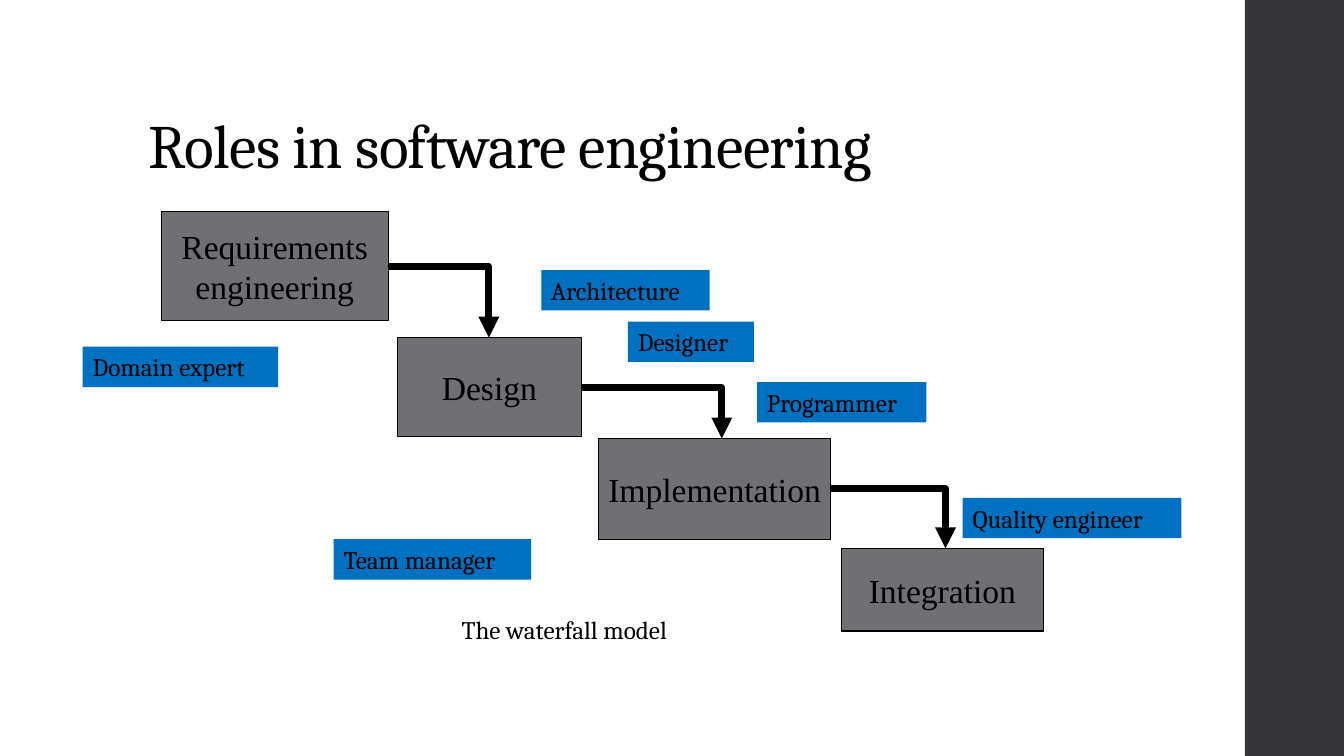
from dataclasses import dataclass

from lxml.etree import SubElement
from pptx import Presentation
from pptx.dml.color import RGBColor
from pptx.enum.shapes import MSO_CONNECTOR as Link, MSO_SHAPE as Preset
from pptx.enum.text import MSO_ANCHOR as Anchor, PP_ALIGN as Align
from pptx.oxml.ns import qn
from pptx.util import Inches, Pt

CELL = Inches(0.1)
COLUMNS, ROWS = 133.33, 75


@dataclass(frozen=True)
class Theme:
    """Colours, fonts and sizes of the slide."""
    ink: RGBColor = RGBColor(0x00, 0x00, 0x00)
    sidebar: RGBColor = RGBColor(0x35, 0x35, 0x37)
    phase: RGBColor = RGBColor(0x6F, 0x6F, 0x74)
    role: RGBColor = RGBColor(0x00, 0x70, 0xC0)
    body_font: str = "Cambria"
    phase_font: str = "Times New Roman"
    title_size: int = 44
    phase_size: int = 24
    role_size: int = 18
    outline: float = 0.75
    arrow: float = 5


THEME = Theme()

PHASES = [
    ("Requirements\nengineering", (16, 21, 22.5, 10.8)),
    ("Design", (39.4, 33.5, 18.3, 9.8)),
    ("Implementation", (59.4, 43.5, 23, 10)),
    ("Integration", (83.5, 54.4, 20, 8.2)),
]
ARROW_COLUMNS = [48.5, 71.6, 93.8]

ROLE_HEIGHT = 4
ROLES = [
    ("Domain expert", 8.2, 34.4, 19.4),
    ("Architecture", 53.7, 26.8, 16.7),
    ("Designer", 62.3, 31.9, 12.5),
    ("Programmer", 75.1, 37.9, 16.8),
    ("Quality engineer", 95.5, 49.4, 21.7),
    ("Team manager", 33.1, 53.5, 19.6),
]


def cells(*counts):
    """Turn grid counts into slide lengths."""
    return [round(count * CELL) for count in counts]


def add_panel(slide, box, fill, outline=None):
    """Draw a flat rectangle, outlined when a line width is given."""
    panel = slide.shapes.add_shape(Preset.RECTANGLE, *cells(*box))
    panel.shadow.inherit = False
    panel.fill.solid()
    panel.fill.fore_color.rgb = fill
    if outline:
        panel.line.color.rgb = THEME.ink
        panel.line.width = Pt(outline)
    else:
        panel.line.fill.background()
    return panel


def write(frame, wording, font, size, align=Align.LEFT, anchor=Anchor.TOP):
    """Fill a text frame and format all its runs."""
    frame.text = wording
    frame.vertical_anchor = anchor
    for paragraph in frame.paragraphs:
        paragraph.alignment = align
        for run in paragraph.runs:
            run.font.name = font
            run.font.size = Pt(size)
            run.font.color.rgb = THEME.ink


def add_title(slide, box):
    """Place the heading at the bottom of its box."""
    frame = slide.shapes.add_textbox(*cells(*box)).text_frame
    frame.word_wrap = True
    write(frame, "Roles in software engineering", THEME.body_font,
          THEME.title_size, anchor=Anchor.BOTTOM)
    heading = frame.paragraphs[0]
    heading.line_spacing = 0.9
    heading.runs[0].font._element.set("spc", "-50")


def add_phase(slide, wording, box):
    """Draw one phase of the waterfall."""
    frame = add_panel(slide, box, THEME.phase, THEME.outline).text_frame
    frame.word_wrap = False
    write(frame, wording, THEME.phase_font, THEME.phase_size,
          Align.CENTER, Anchor.MIDDLE)


def add_flow(slide, source, target, column):
    """Run an elbow arrow from a phase's right side to the next one's top."""
    left, top, width, height = source
    ends = cells(left + width, top + height / 2, column, target[1])
    arrow = slide.shapes.add_connector(Link.ELBOW, *ends)
    arrow.line.color.rgb = THEME.ink
    arrow.line.width = Pt(THEME.arrow)
    properties = arrow._element.spPr
    properties.find(qn("a:prstGeom")).set("prst", "bentConnector2")
    SubElement(arrow.line._get_or_add_ln(), qn("a:tailEnd"), type="triangle")
    SubElement(properties, qn("a:effectLst"))


def add_waterfall(slide):
    """Draw the phases and the arrows that join them."""
    for wording, box in PHASES:
        add_phase(slide, wording, box)
    boxes = [box for _, box in PHASES]
    for source, target, column in zip(boxes, boxes[1:], ARROW_COLUMNS):
        add_flow(slide, source, target, column)


def add_caption(slide, box):
    """Name the model below the diagram."""
    frame = slide.shapes.add_textbox(*cells(*box)).text_frame
    frame.word_wrap = True
    write(frame, "The waterfall model", THEME.body_font, THEME.role_size)


def add_roles(slide):
    """Place a tag for each role beside its phase."""
    for role, left, top, width in ROLES:
        tag = add_panel(slide, (left, top, width, ROLE_HEIGHT), THEME.role)
        tag.text_frame.word_wrap = True
        write(tag.text_frame, role, THEME.body_font, THEME.role_size)


def main():
    """Build and save the slide."""
    deck = Presentation()
    deck.slide_width, deck.slide_height = cells(COLUMNS, ROWS)
    slide = deck.slides.add_slide(deck.slide_layouts[6])
    add_panel(slide, (123.5, 0, COLUMNS - 123.5, ROWS), THEME.sidebar)
    add_title(slide, (13.8, 4, 106, 14.5))
    add_waterfall(slide)
    add_caption(slide, (44.8, 60.5, 26.2, 4))
    add_roles(slide)
    deck.save("out.pptx")


if __name__ == "__main__":
    main()
